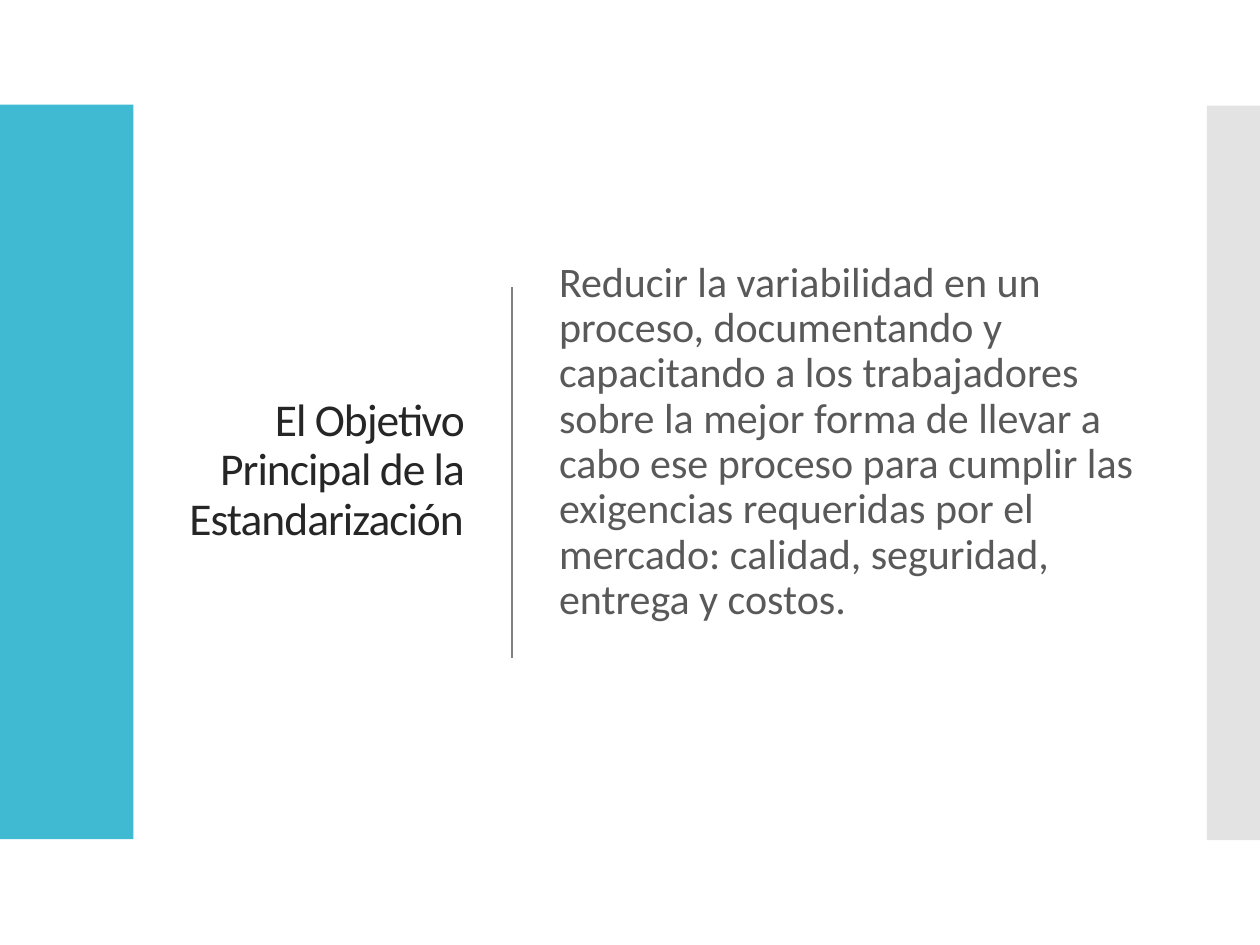
from pptx import Presentation
from pptx import util as u
from pptx.dml.color import RGBColor
from pptx.enum import shapes, text
from pptx.oxml.ns import qn
from lxml import etree

THEME = {
    "font": "Calibri",
    "accent": RGBColor(0x40, 0xBA, 0xD2),
    "edge": RGBColor(0xC8, 0xC8, 0xC8),
    "rule": RGBColor(0x80, 0x80, 0x80),
    "title": RGBColor(0x26, 0x26, 0x26),
    "body": RGBColor(0x59, 0x59, 0x59),
    "title_size": u.Pt(26),
    "body_size": u.Pt(24),
}

deck = Presentation()
deck.slide_width, deck.slide_height = u.Cm(25.4), u.Cm(19.05)
page = deck.slides.add_slide(deck.slide_layouts[6])

bands = [
    (0, 2.11, 2.69, "accent", None),
    (24.33, 2.13, 1.07, "edge", 50),
]
for left, top, width, colour, opacity in bands:
    band = page.shapes.add_shape(
        shapes.MSO_SHAPE.RECTANGLE, u.Cm(left), u.Cm(top), u.Cm(width), u.Cm(14.81))
    band.shadow.inherit = False
    band.fill.solid()
    band.fill.fore_color.rgb = THEME[colour]
    band.line.fill.background()
    if opacity:
        shade = band._element.spPr.find(qn("a:solidFill"))[0]
        etree.SubElement(shade, qn("a:alpha"), val=str(opacity * 1000))

rule = page.shapes.add_connector(
    shapes.MSO_CONNECTOR.STRAIGHT, u.Cm(10.32), u.Cm(5.79), u.Cm(10.32), u.Cm(13.26))
rule.line.color.rgb = THEME["rule"]
rule.line.width = u.Pt(1)
etree.SubElement(rule._element.spPr, qn("a:effectLst"))

blocks = [
    {
        "name": "title", "left": 3.2, "width": 6.4, "spacing": -60,
        "words": "El Objetivo Principal de la Estandarización",
        "frame": {},
        "para": {"alignment": text.PP_ALIGN.RIGHT},
    },
    {
        "name": "body", "left": 11.02, "width": 12.32, "spacing": 0,
        "words": "Reducir la variabilidad en un proceso, documentando y capacitando "
                 "a los trabajadores sobre la mejor forma de llevar a cabo ese proceso "
                 "para cumplir las exigencias requeridas por el mercado: calidad, "
                 "seguridad, entrega y costos.",
        "frame": {"margin_bottom": u.Cm(1.29)},
        "para": {"alignment": text.PP_ALIGN.LEFT, "space_before": u.Pt(12)},
    },
]
for block in blocks:
    box = page.shapes.add_textbox(
        u.Cm(block["left"]), u.Cm(2.39), u.Cm(block["width"]), u.Cm(14.22))
    frame = box.text_frame
    para = frame.paragraphs[0]
    span = para.add_run()
    span.text = block["words"]
    span.font.color.rgb = THEME[block["name"]]
    span._r.get_or_add_rPr().set("spc", str(block["spacing"]))
    formats = [
        (frame, {"word_wrap": True, "vertical_anchor": text.MSO_ANCHOR.MIDDLE,
                 **block["frame"]}),
        (para, {"line_spacing": 0.9, **block["para"]}),
        (span.font, {"name": THEME["font"], "size": THEME[block["name"] + "_size"]}),
    ]
    for target, values in formats:
        for key, value in values.items():
            setattr(target, key, value)

deck.save("out.pptx")
